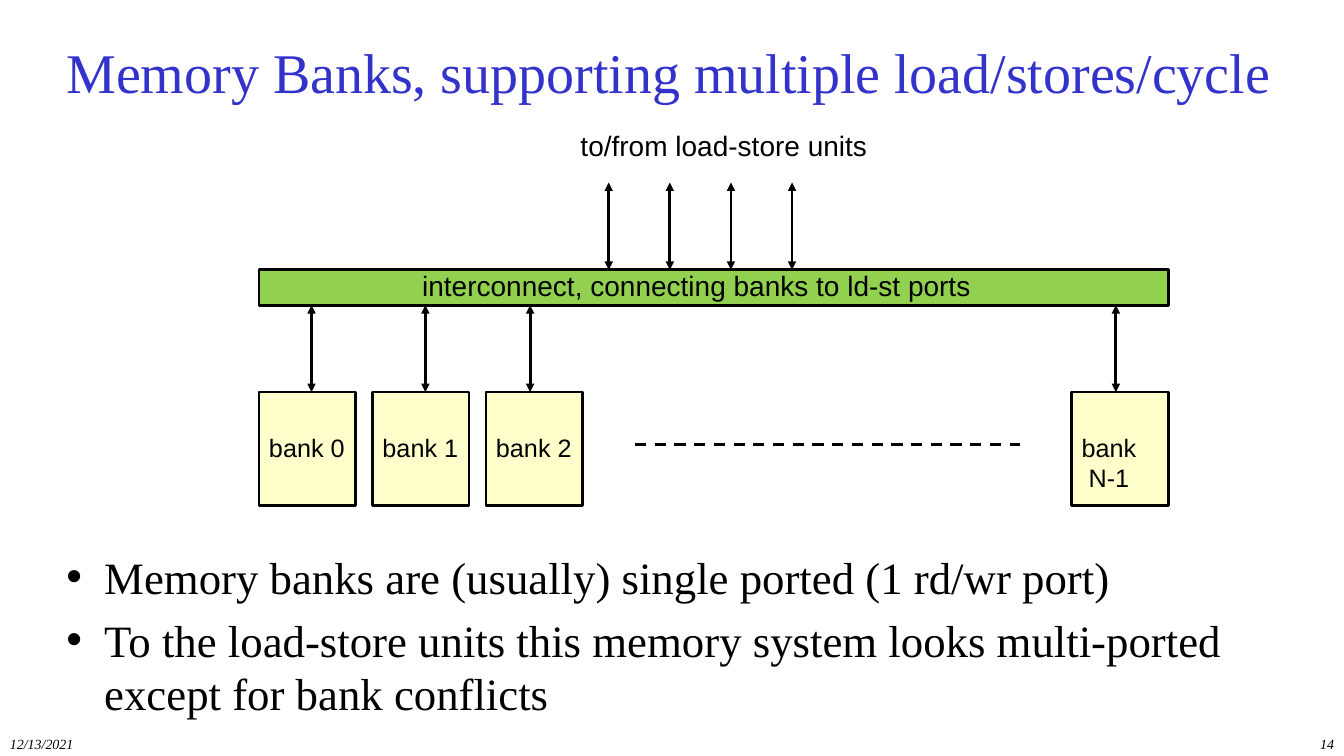
from pptx import Presentation
from pptx.dml.color import RGBColor
from pptx.enum.dml import MSO_LINE
from pptx.enum.shapes import MSO_CONNECTOR, MSO_SHAPE
from pptx.enum.text import MSO_ANCHOR, MSO_AUTO_SIZE, PP_ALIGN
from pptx.oxml.ns import qn
from pptx.util import Cm, Pt
from lxml import etree

RECT = MSO_SHAPE.RECTANGLE
STRAIGHT = MSO_CONNECTOR.STRAIGHT
DASH = MSO_LINE.DASH
MIDDLE = MSO_ANCHOR.MIDDLE
NO_FIT, FIT_SHAPE = MSO_AUTO_SIZE.NONE, MSO_AUTO_SIZE.SHAPE_TO_FIT_TEXT
LEFT, RIGHT = PP_ALIGN.LEFT, PP_ALIGN.RIGHT

BLACK = RGBColor(0x00, 0x00, 0x00)
BLUE = RGBColor(0x33, 0x33, 0xCC)
CREAM = RGBColor(0xFF, 0xFF, 0xCC)
GREEN = RGBColor(0x92, 0xD0, 0x50)
SERIF, SANS = "Times New Roman", "Arial"

# Diagram layout, in centimetres
BANK_LEFT, BANK_TOP, BANK_W, BANK_H, BANK_PITCH = 6.53, 9.88, 2.43, 2.86, 2.86
LAST_BANK_LEFT = 27.01
BAR_TOP, BAR_H = 6.8, 0.89
BAR_W = LAST_BANK_LEFT + BANK_W - BANK_LEFT
BANK_ARROWS = (7.85, 10.72, 13.36, 28.12)
PORT_LEFT, PORT_TOP, PORT_PITCH, PORTS = 15.34, 4.6, 1.54, 4


def style_text(p, size, font, color=BLACK, align=LEFT, italic=False):
    p.alignment = align
    p.font.size = Pt(size)
    p.font.name = font
    p.font.color.rgb = color
    p.font.italic = italic


def fill_placeholder(sp, box, lines, size, color):
    sp.left, sp.top, sp.width, sp.height = (Cm(v) for v in box)
    tf = sp.text_frame
    tf.text = "\n".join(lines)
    tf.auto_size = NO_FIT
    for p in tf.paragraphs:
        style_text(p, size, SERIF, color)
    return tf


def add_text(slide, box, text, size, font=SANS, wrap=False, **style):
    sp = slide.shapes.add_textbox(*(Cm(v) for v in box))
    tf = sp.text_frame
    tf.word_wrap = wrap
    tf.auto_size = NO_FIT if wrap else FIT_SHAPE
    p = tf.paragraphs[0]
    p.text = text
    style_text(p, size, font, **style)


def add_box(slide, box, color):
    sp = slide.shapes.add_shape(RECT, *(Cm(v) for v in box))
    sp.shadow.inherit = False
    sp.fill.solid()
    sp.fill.fore_color.rgb = color
    sp.line.color.rgb = BLACK
    sp.line.width = Pt(2)


def add_line(slide, x1, y1, x2, y2):
    line = slide.shapes.add_connector(STRAIGHT, Cm(x1), Cm(y1), Cm(x2), Cm(y2))
    line.line.color.rgb = BLACK
    line.line.width = Pt(2)
    etree.SubElement(line._element.spPr, qn("a:effectLst"))
    return line


def add_double_arrow(slide, x, top, bottom):
    ln = add_line(slide, x, top, x, bottom).line._get_or_add_ln()
    for end in ("a:headEnd", "a:tailEnd"):
        etree.SubElement(ln, qn(end), type="triangle")


def add_bank(slide, left, name, label_w, label_h=1.04):
    add_box(slide, (left, BANK_TOP, BANK_W, BANK_H), CREAM)
    add_text(slide, (left, 10.77, label_w, label_h), name, 18)


def main():
    prs = Presentation()
    prs.slide_width, prs.slide_height = Cm(33.87), Cm(19.05)
    slide = prs.slides.add_slide(prs.slide_layouts[1])

    # Title and bullets
    title = fill_placeholder(
        slide.shapes.title, (1.42, 0.84, 31.6, 1.9),
        ["Memory Banks, supporting multiple load/stores/cycle"], 40, BLUE)
    title.vertical_anchor = MIDDLE
    body = fill_placeholder(
        slide.placeholders[1], (1.42, 13.72, 31.6, 4.27),
        ["Memory banks are (usually) single ported (1 rd/wr port)",
         "To the load-store units this memory system looks multi-ported "
         "except for bank conflicts"], 32, BLACK)
    for p in body.paragraphs:
        p.space_before = Pt(6.4)

    # Date and slide number
    add_text(slide, (0, 18.42, 4.24, 0.63), "12/13/2021", 10, SERIF,
             wrap=True, italic=True)
    add_text(slide, (26.82, 18.42, 7.05, 0.63), "14", 10, SERIF,
             wrap=True, italic=True, align=RIGHT)

    # Memory banks
    for i in range(3):
        add_bank(slide, BANK_LEFT + i * BANK_PITCH, f"bank {i}", 2.48)
    add_bank(slide, LAST_BANK_LEFT, "bank \n N-1", 2.11, 1.78)
    add_line(slide, 16, 11.2, 25.7, 11.2).line.dash_style = DASH

    # Interconnect
    add_box(slide, (BANK_LEFT, BAR_TOP, BAR_W, BAR_H), GREEN)
    add_text(slide, (10.39, 6.63, 14.38, 1.11),
             "interconnect, connecting banks to ld-st ports", 20)
    for x in BANK_ARROWS:
        add_double_arrow(slide, x, BAR_TOP + BAR_H, BANK_TOP)

    # Load-store ports
    for i in range(PORTS):
        add_double_arrow(slide, PORT_LEFT + i * PORT_PITCH, PORT_TOP, BAR_TOP)
    add_text(slide, (14.38, 3.12, 7.77, 1.11), "to/from load-store units", 20)

    prs.save("out.pptx")


if __name__ == "__main__":
    main()
